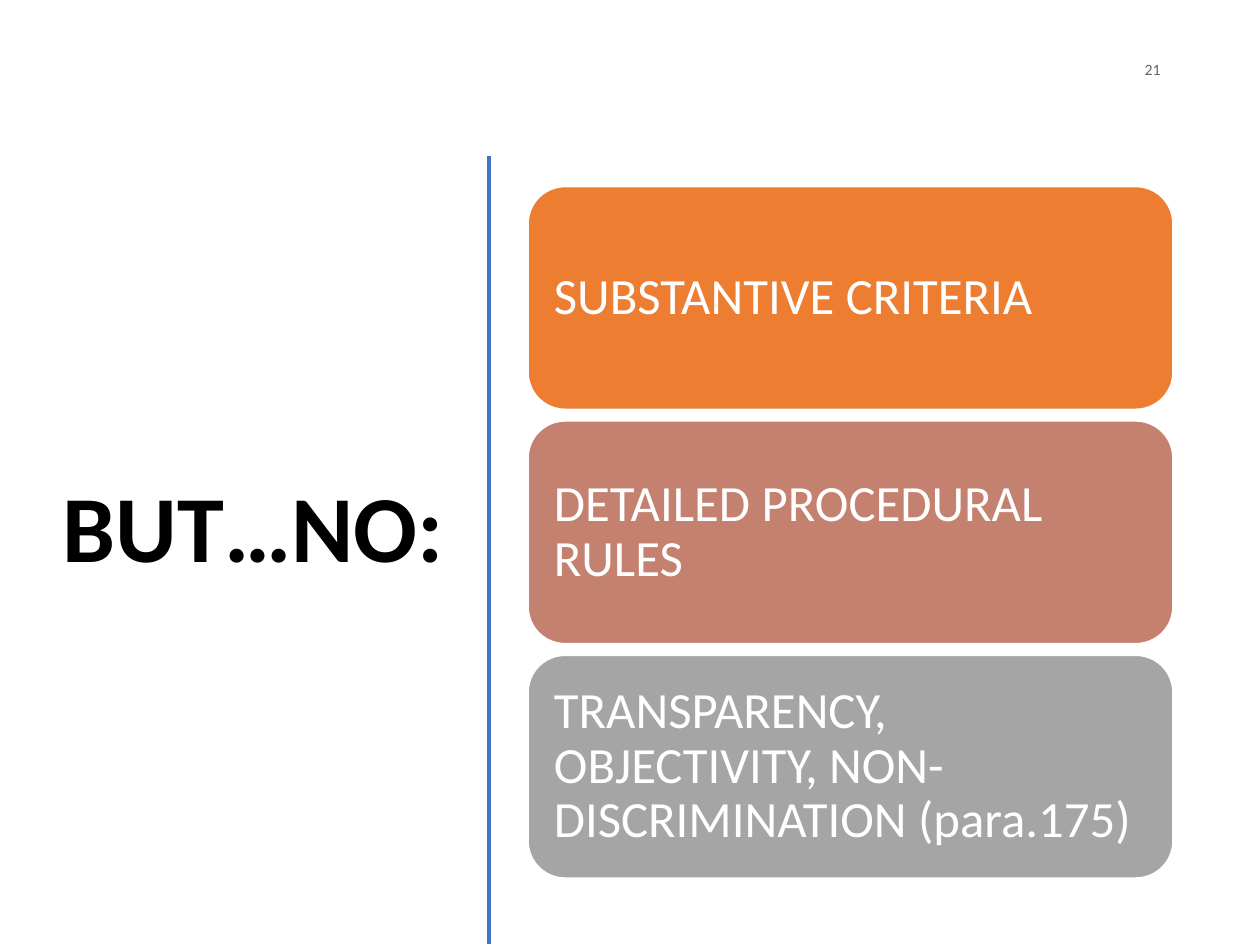
from lxml.etree import SubElement
from pptx import Presentation
from pptx.dml.color import RGBColor
from pptx.enum.shapes import MSO_CONNECTOR as Connector, MSO_SHAPE as Shape
from pptx.enum.text import MSO_ANCHOR as Anchor, PP_ALIGN as Align
from pptx.oxml.ns import qn
from pptx.util import Inches, Pt


def color(value):
    return RGBColor.from_string(value)


def write(shape, text, size, ink, align, bold=False, spacing=0.9):
    """Fill a shape with one vertically centred paragraph."""
    frame = shape.text_frame
    frame.word_wrap = True
    frame.vertical_anchor = Anchor.MIDDLE
    paragraph = frame.paragraphs[0]
    paragraph.alignment = align
    paragraph.line_spacing = spacing
    run = paragraph.add_run()
    run.text = text
    run.font.name = "Calibri"
    run.font.size = Pt(size)
    run.font.bold = bold
    run.font.color.rgb = color(ink)


presentation = Presentation()
presentation.slide_width = Inches(10)
presentation.slide_height = Inches(7.5)
slide = presentation.slides.add_slide(presentation.slide_layouts[6])

title = slide.shapes.add_textbox(Inches(0.39), Inches(1.17), Inches(3.23), Inches(6.11))
write(title, "BUT…NO:", 54, "000000", Align.RIGHT, bold=True)

number = slide.shapes.add_textbox(Inches(7.06), Inches(0.35), Inches(2.25), Inches(0.4))
write(number, "21", 9, "666666", Align.RIGHT, spacing=1.0)

divider = slide.shapes.add_connector(
    Connector.STRAIGHT, Inches(3.88), Inches(1.24), Inches(3.88), Inches(7.49))
divider.line.color.rgb = color("4472C4")
divider.line.width = Pt(2)
SubElement(divider._element.spPr, qn("a:effectLst"))

# Three equal cards, stacked at a constant pitch
CARD_LEFT, CARD_TOP, CARD_WIDTH, CARD_HEIGHT, PITCH = 4.19, 1.48, 5.12, 1.77, 1.86
cards = [
    ("SUBSTANTIVE CRITERIA", "ED7D31"),
    ("DETAILED PROCEDURAL RULES", "C48170"),
    ("TRANSPARENCY, OBJECTIVITY, NON- DISCRIMINATION (para.175)", "A5A5A5"),
]
for row, (text, fill) in enumerate(cards):
    card = slide.shapes.add_shape(
        Shape.ROUNDED_RECTANGLE, Inches(CARD_LEFT), Inches(CARD_TOP + row * PITCH),
        Inches(CARD_WIDTH), Inches(CARD_HEIGHT))
    card.shadow.inherit = False
    card.fill.solid()
    card.fill.fore_color.rgb = color(fill)
    card.line.color.rgb = color("FFFFFF")
    card.line.width = Pt(1)
    frame = card.text_frame
    # The rounded corners already inset the text by 0.09 inch
    frame.margin_left = frame.margin_right = Inches(0.12)
    frame.margin_top = frame.margin_bottom = Inches(0.12)
    write(card, text, 29, "FFFFFF", Align.LEFT)

presentation.save("out.pptx")
